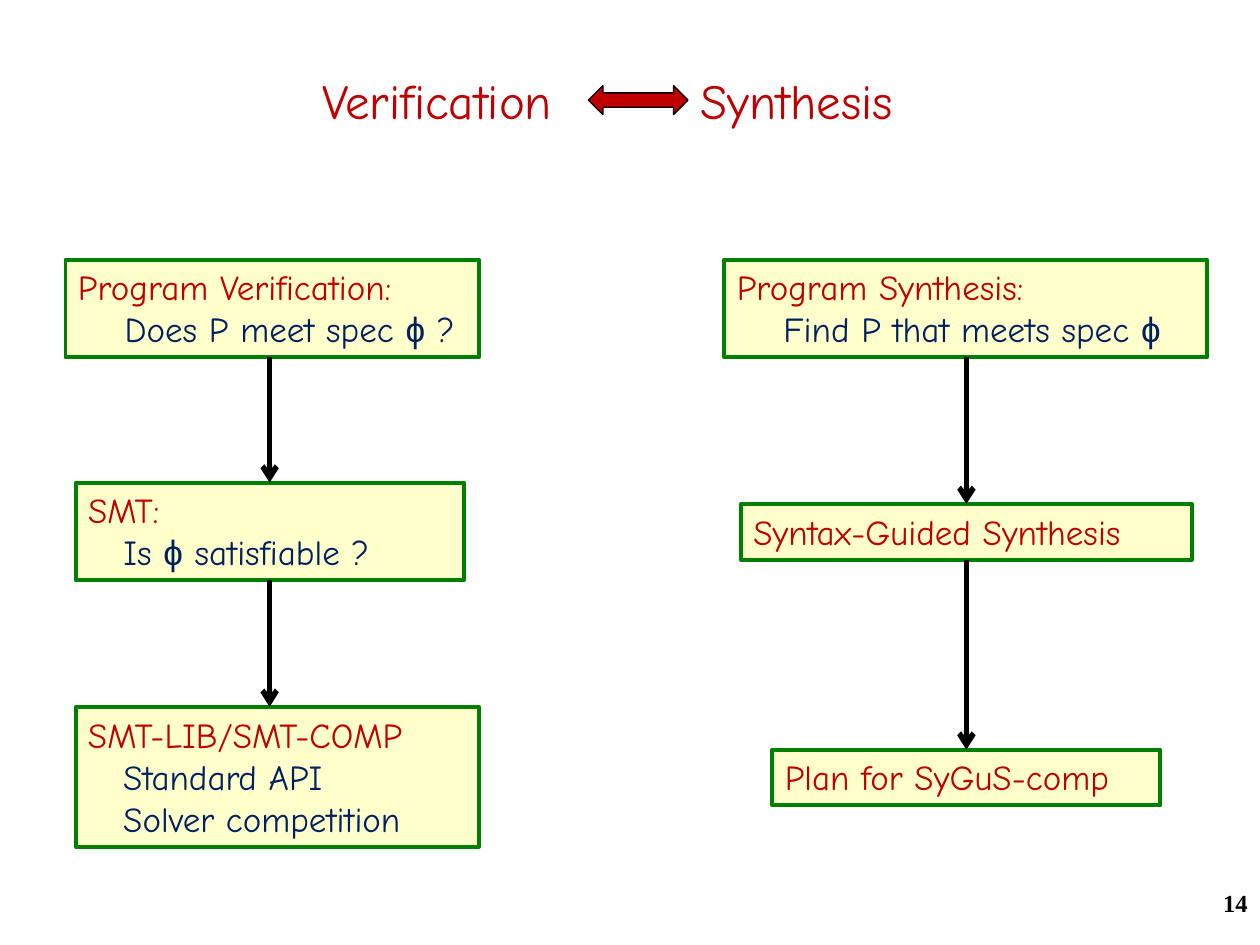
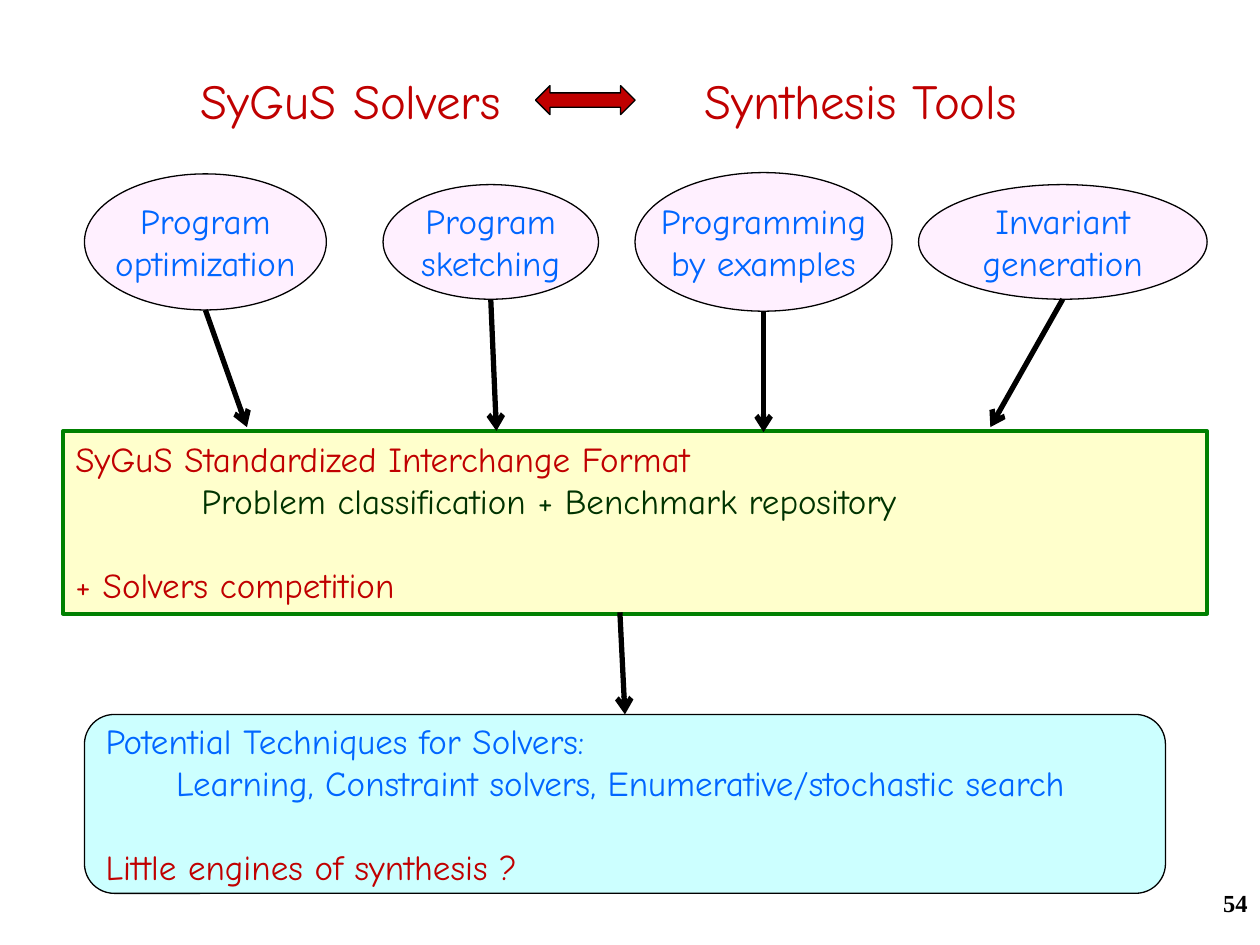
from lxml import etree
from pptx import Presentation
from pptx.dml.color import RGBColor
from pptx.enum import shapes, text
from pptx.oxml import ns
from pptx.util import Inches, Pt

COLORS = {
    "red": "C00000", "navy": "002060", "forest": "003300", "blue": "0066FF",
    "black": "000000", "green": "008000", "cream": "FFFFCC",
    "pink": "FFCCFF", "aqua": "CCFFFF",
}
FONT, SYMBOL_FONT = "Comic Neue", "Arial"
KIND = shapes.MSO_SHAPE
LEFT, CENTER, RIGHT = text.PP_ALIGN.LEFT, text.PP_ALIGN.CENTER, text.PP_ALIGN.RIGHT
TOP, MIDDLE = text.MSO_ANCHOR.TOP, text.MSO_ANCHOR.MIDDLE


def write(box, lines, align=LEFT, anchor=TOP, size=20, font=FONT, bold=False, wrap=True):
    """Fill a box with lines of (text, colour, indent in inches, points before)."""
    frame = box.text_frame
    frame.word_wrap = wrap
    frame.vertical_anchor = anchor
    for number, (words, color, indent, before) in enumerate(lines):
        para = frame.add_paragraph() if number else frame.paragraphs[0]
        para.alignment = align
        para.space_before = Pt(before)
        if indent:
            para._p.get_or_add_pPr().set("marL", str(Inches(indent)))
        for part in words.partition("ϕ"):
            if part:
                span = para.add_run()
                span.text = part
                span.font.name = SYMBOL_FONT if part == "ϕ" else font
                span.font.size = Pt(size)
                span.font.bold = bold
                span.font.color.rgb = RGBColor.from_string(COLORS[color])


def draw(page, kind, at, fill, line="black", width=0.75):
    """Add a preset shape with a solid fill and an outline."""
    box = page.shapes.add_shape(kind, *map(Inches, at))
    box.shadow.inherit = False
    box.fill.solid()
    box.fill.fore_color.rgb = RGBColor.from_string(COLORS[fill])
    box.line.color.rgb = RGBColor.from_string(COLORS[line])
    box.line.width = Pt(width)
    return box


deck = Presentation()
deck.slide_width, deck.slide_height = Inches(10), Inches(7.5)

# Title halves either side of a double arrow, and page number, on both slides
title_left, title_right = 0.58, 9.08
pages = []
for left_words, left_end, right_words, right_start, arrow_left, number in [
    ("Verification", 4.48, "Synthesis", 5.46, 4.67, "14"),
    ("SyGuS Solvers", 4.07, "Synthesis Tools", 5.49, 4.25, "54"),
]:
    page = deck.slides.add_slide(deck.slide_layouts[6])
    pages.append(page)
    for words, start, end, align in [
        (left_words, title_left, left_end, RIGHT),
        (right_words, right_start, title_right, LEFT),
    ]:
        title_box = page.shapes.add_textbox(*map(Inches, (start, 0.17, end - start, 1.25)))
        write(title_box, [(words, "red", 0, 0)], align, MIDDLE, size=28)
    number_box = page.shapes.add_textbox(*map(Inches, (7.92, 7, 2.08, 0.5)))
    write(number_box, [(number, "black", 0, 0)], RIGHT, size=14,
          font="Times New Roman", bold=True)
    draw(page, KIND.LEFT_RIGHT_ARROW, (arrow_left, 0.68, 0.79, 0.23), "red")
comparison, tools = pages
arrows = []  # page, start, end

# Verification and synthesis columns: arrow x, then boxes as left, top, width, indent, lines
columns = [
    (2.14, [
        (0.52, 2.06, 3.28, 0.37, ["Program Verification:", "Does P meet spec ϕ ?"]),
        (0.6, 3.83, 3.08, 0.28, ["SMT:", "Is ϕ satisfiable ?"]),
        (0.6, 5.61, 3.2, 0.28, ["SMT-LIB/SMT-COMP", "Standard API", "Solver competition"]),
    ]),
    (7.67, [
        (5.75, 2.06, 3.83, 0.37, ["Program Synthesis:", "Find P that meets spec ϕ"]),
        (5.88, 4, 3.58, 0, ["Syntax-Guided Synthesis"]),
        (6.13, 5.95, 3.08, 0, ["Plan for SyGuS-comp"]),
    ]),
]
for arrow_x, steps in columns:
    bottom = None
    for left, top, width, indent, (heading, *details) in steps:
        height = 0.11 + (1 + len(details)) / 3
        step = draw(comparison, KIND.RECTANGLE, (left, top, width, height),
                    "cream", "green", 2.25)
        write(step, [(heading, "red", 0, 0)] + [(line, "navy", indent, 0) for line in details])
        if bottom:
            arrows.append((comparison, (arrow_x, bottom), (arrow_x, top)))
        bottom = top + height

# Interchange format
exchange = draw(tools, KIND.RECTANGLE, (0.5, 3.42, 9.08, 1.45), "cream", "green", 2.25)
write(exchange, [
    ("SyGuS Standardized Interchange Format", "red", 0, 0),
    ("Problem classification + Benchmark repository", "forest", 1, 0),
    ("+ Solvers competition", "red", 0, 24),
])

# Synthesis tools, centred on one row, each pointing to the format
row_middle = 1.92
for left, width, height, lines, target in [
    (0.67, 1.92, 1.08, ["Program", "optimization"], (1.96, 3.39)),
    (3.04, 1.71, 0.91, ["Program", "sketching"], (3.94, 3.42)),
    (5.04, 2.04, 1.1, ["Programming", "by examples"], (6.06, 3.43)),
    (7.29, 2.29, 0.91, ["Invariant", "generation"], (7.86, 3.39)),
]:
    tool = draw(tools, KIND.OVAL, (left, row_middle - height / 2, width, height), "pink")
    tint = tool._element.spPr.find(ns.qn("a:solidFill"))[0]
    etree.SubElement(tint, ns.qn("a:alpha")).set("val", "29000")
    write(tool, [(line, "blue", 0, 0) for line in lines], CENTER, MIDDLE, wrap=False)
    arrows.append((tools, (left + width / 2, row_middle + height / 2), target))

# Solver techniques
techniques = draw(tools, KIND.ROUNDED_RECTANGLE, (0.67, 5.67, 8.58, 1.42), "aqua")
write(techniques, [
    ("Potential Techniques for Solvers:", "blue", 0, 0),
    ("Learning, Constraint solvers, Enumerative/stochastic search", "blue", 0.56, 0),
    ("Little engines of synthesis ?", "red", 0, 24),
], anchor=MIDDLE)
arrows.append((tools, (4.92, 4.86), (4.96, 5.67)))

# Arrows
for page, start, end in arrows:
    arrow = page.shapes.add_connector(shapes.MSO_CONNECTOR.STRAIGHT,
                                      *map(Inches, start + end))
    arrow.line.color.rgb = RGBColor.from_string(COLORS["black"])
    arrow.line.width = Pt(3)
    etree.SubElement(arrow.line._get_or_add_ln(), ns.qn("a:tailEnd")).set("type", "arrow")
    etree.SubElement(arrow._element.spPr, ns.qn("a:effectLst"))

deck.save("out.pptx")
